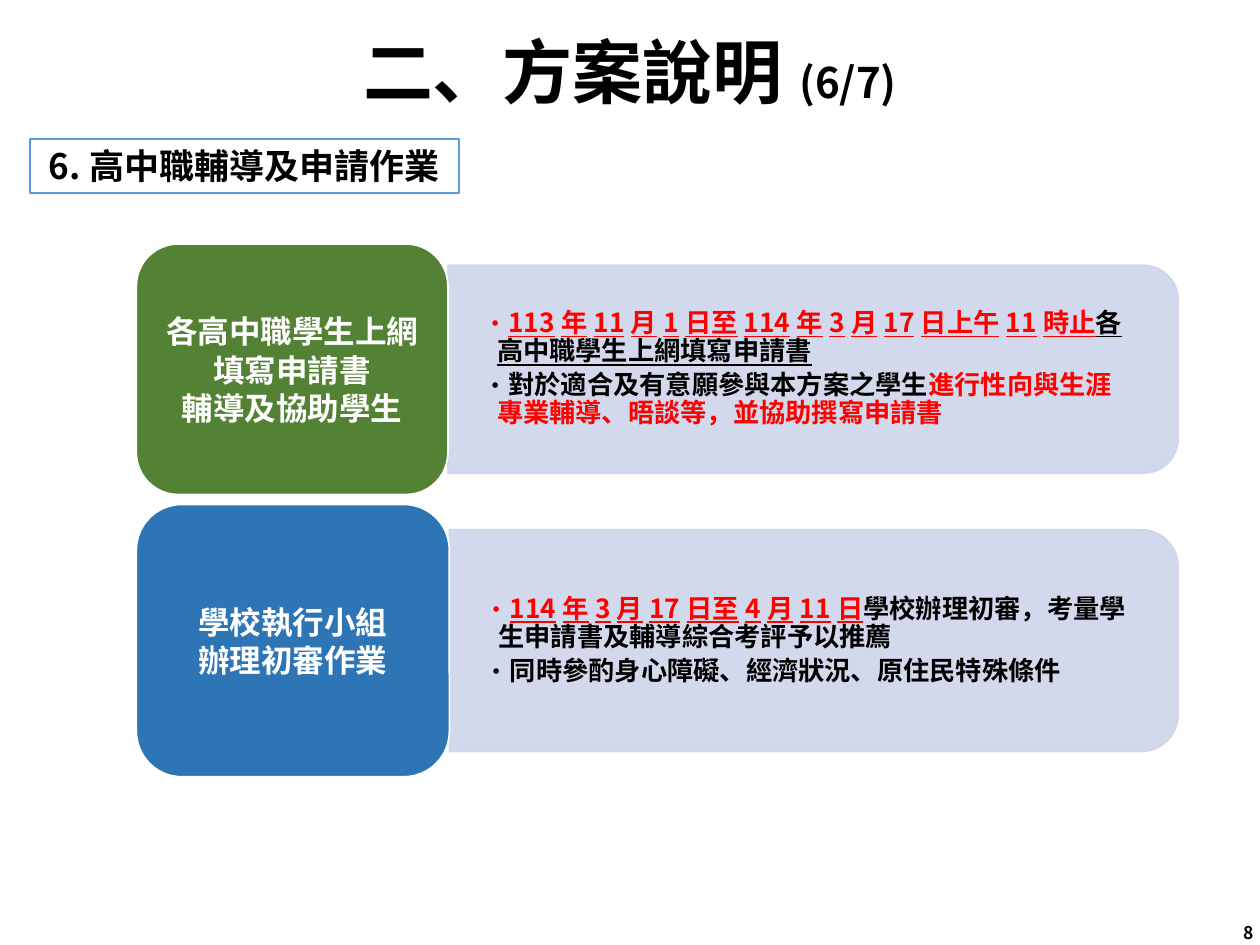
import dataclasses

import lxml.etree
import pptx
import pptx.dml.color
import pptx.enum.shapes
import pptx.enum.text
import pptx.oxml.ns
import pptx.util

Cm = pptx.util.Cm
Pt = pptx.util.Pt
RGBColor = pptx.dml.color.RGBColor
Align = pptx.enum.text.PP_ALIGN
Shape = pptx.enum.shapes.MSO_SHAPE
qn = pptx.oxml.ns.qn


@dataclasses.dataclass(frozen=True)
class Theme:
    """Hold the colours, font and type sizes of the slide."""
    font: str = "Noto Sans CJK SC"
    black: str = "000000"
    white: str = "FFFFFF"
    red: str = "FF0000"
    border: str = "5B9BD5"
    panel: str = "CFD5EA"
    green: str = "548235"
    blue: str = "2E75B6"
    title: int = 40
    counter: int = 24
    heading: int = 20
    label: int = 18
    body: int = 15
    number: int = 10


THEME = Theme()


def style_paragraph(paragraph, size, color, align):
    """Set the shared font, size, colour and alignment of a paragraph."""
    paragraph.alignment = align
    font = paragraph.font
    font.size, font.bold, font.name = Pt(size), True, THEME.font
    font.color.rgb = RGBColor.from_string(color)
    latin = paragraph._p.pPr.find(qn("a:defRPr")).find(qn("a:latin"))
    east_asian = lxml.etree.Element(qn("a:ea"), typeface=THEME.font)
    latin.addnext(east_asian)


def prepare_frame(shape, horizontal=0.25, vertical=0.13):
    """Wrap and centre the text of a shape vertically, with the given margins."""
    frame = shape.text_frame
    frame.word_wrap = True
    frame.auto_size = pptx.enum.text.MSO_AUTO_SIZE.NONE
    frame.vertical_anchor = pptx.enum.text.MSO_ANCHOR.MIDDLE
    frame.margin_left = frame.margin_right = Cm(horizontal)
    frame.margin_top = frame.margin_bottom = Cm(vertical)
    return frame


def add_box(slide, kind, left, top, width, height, fill, line):
    """Add a flat preset shape with a solid fill and a thin line."""
    shape = slide.shapes.add_shape(kind, Cm(left), Cm(top), Cm(width), Cm(height))
    shape.shadow.inherit = False
    shape.fill.solid()
    shape.fill.fore_color.rgb = RGBColor.from_string(fill)
    shape.line.color.rgb = RGBColor.from_string(line)
    shape.line.width = Pt(1)
    return shape


def add_title(slide, left, top, width, height, text, counter):
    """Place the title placeholder and its smaller page counter."""
    title = slide.shapes.title
    title.left, title.top, title.width, title.height = map(Cm, (left, top, width, height))
    paragraph = prepare_frame(title).paragraphs[0]
    paragraph.line_spacing = 0.9
    style_paragraph(paragraph, THEME.title, THEME.black, Align.CENTER)
    paragraph.add_run().text = text
    run = paragraph.add_run()
    run.text = counter
    run.font.size = Pt(THEME.counter)


def add_heading(slide, left, top, width, height, text):
    """Add the outlined section heading."""
    shape = add_box(slide, Shape.RECTANGLE, left, top, width, height, THEME.white, THEME.border)
    paragraph = prepare_frame(shape).paragraphs[0]
    paragraph.text = text
    style_paragraph(paragraph, THEME.heading, THEME.black, Align.CENTER)


def add_panel(slide, left, top, width, height):
    """Add a translucent panel rounded on its right side."""
    panel = add_box(slide, Shape.ROUND_2_SAME_RECTANGLE,
                    left + (width - height) / 2, top + (height - width) / 2,
                    height, width, THEME.panel, THEME.panel)
    panel.rotation = 90
    for color in panel._element.spPr.iter(qn("a:srgbClr")):
        lxml.etree.SubElement(color, qn("a:alpha"), val="90000")


def add_bullets(slide, left, top, width, height, items):
    """Add bulleted paragraphs made of (text, colour, underlined) runs."""
    box = slide.shapes.add_textbox(Cm(left), Cm(top), Cm(width), Cm(height))
    frame = prepare_frame(box, 0.69, 0.36)
    for index, runs in enumerate(items):
        paragraph = frame.paragraphs[0] if index == 0 else frame.add_paragraph()
        paragraph.level = 1
        paragraph.line_spacing = 0.9
        paragraph.space_after = Pt(3)
        properties = paragraph._p.get_or_add_pPr()
        properties.set("marL", str(Cm(0.3)))
        properties.set("indent", str(Cm(-0.3)))
        bullet_color = lxml.etree.SubElement(properties, qn("a:buClr"))
        lxml.etree.SubElement(bullet_color, qn("a:srgbClr"), val=runs[0][1])
        lxml.etree.SubElement(properties, qn("a:buFont"), typeface=THEME.font)
        lxml.etree.SubElement(properties, qn("a:buChar"), char="•")
        style_paragraph(paragraph, THEME.body, runs[0][1], Align.LEFT)
        for text, color, underlined in runs:
            run = paragraph.add_run()
            run.text = text
            run.font.color.rgb = RGBColor.from_string(color)
            run.font.underline = underlined


def add_step(slide, left, top, width, height, label_width, panel_height, fill, label, items):
    """Add one step: a coloured label with a panel of bullets beside it."""
    panel_left = left + label_width
    panel_top = top + (height - panel_height) / 2
    panel_width = width - label_width
    add_panel(slide, panel_left, panel_top, panel_width, panel_height)
    add_bullets(slide, panel_left, panel_top, panel_width - 0.2, panel_height, items)
    shape = add_box(slide, Shape.ROUNDED_RECTANGLE, left, top, label_width, height,
                    fill, THEME.white)
    frame = prepare_frame(shape, 0.18, 0.1)
    for index, text in enumerate(label):
        paragraph = frame.paragraphs[0] if index == 0 else frame.add_paragraph()
        paragraph.text = text
        paragraph.line_spacing = Pt(22)
        style_paragraph(paragraph, THEME.label, THEME.white, Align.CENTER)


def add_page_number(slide, left, top, width, height, text):
    """Add the page number at the lower right."""
    box = slide.shapes.add_textbox(Cm(left), Cm(top), Cm(width), Cm(height))
    paragraph = prepare_frame(box).paragraphs[0]
    paragraph.text = text
    style_paragraph(paragraph, THEME.number, THEME.black, Align.RIGHT)


def main():
    """Build and save the presentation."""
    presentation = pptx.Presentation()
    presentation.slide_width, presentation.slide_height = Cm(25.4), Cm(19.05)
    slide = presentation.slides.add_slide(presentation.slide_layouts[5])
    add_title(slide, 1.75, 0.38, 21.9, 2.31, "二、方案說明", "(6/7)")
    add_heading(slide, 0.61, 2.8, 8.64, 1.09, "6.高中職輔導及申請作業")
    add_step(slide, 2.75, 4.92, 21, 5.05, 6.28, 4.19, THEME.green,
             ["各高中職學生上網", "填寫申請書", "輔導及協助學生"],
             [[("113年11月1日至114年3月17日上午11時止", THEME.red, True),
               ("各高中職學生上網填寫申請書", THEME.black, True)],
              [("對於適合及有意願參與本方案之學生", THEME.black, False),
               ("進行性向與生涯專業輔導、晤談等，並協助撰寫申請書", THEME.red, False)]])
    add_step(slide, 2.75, 10.17, 21, 5.49, 6.31, 4.47, THEME.blue,
             ["學校執行小組", "辦理初審作業"],
             [[("114年3月17日至4月11日", THEME.red, True),
               ("學校辦理初審，考量學生申請書及輔導綜合考評予以推薦", THEME.black, False)],
              [("同時參酌身心障礙、經濟狀況、原住民特殊條件", THEME.black, False)]])
    add_page_number(slide, 19.81, 18.29, 5.72, 1.02, "8")
    presentation.save("out.pptx")


if __name__ == "__main__":
    main()
